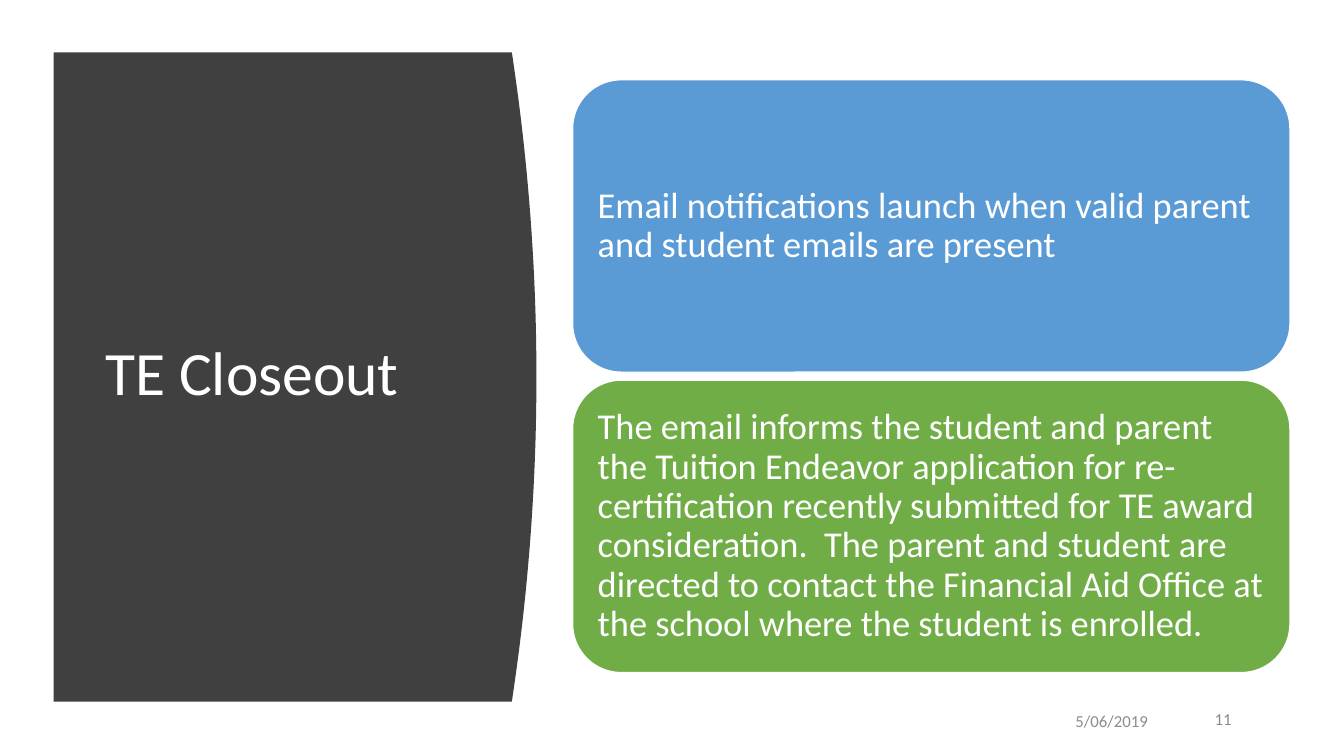
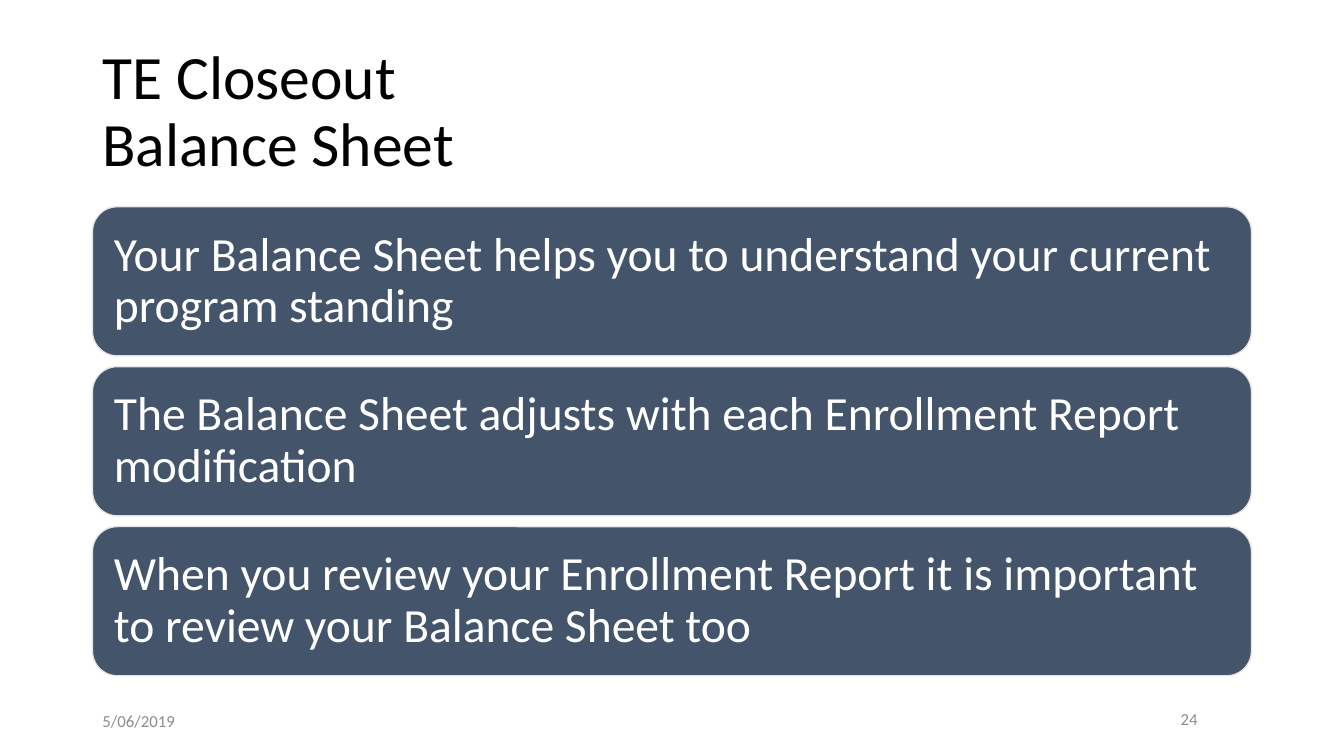
"""Builds two closeout slides with a shared title, card and footer style."""
from pptx import Presentation
from pptx import util as u
from pptx.dml.color import RGBColor
from pptx.enum import shapes, text

WHITE = RGBColor(0xFF, 0xFF, 0xFF)
BLACK = RGBColor(0x00, 0x00, 0x00)
CHARCOAL = RGBColor(0x40, 0x40, 0x40)
GREY = RGBColor(0x8C, 0x8C, 0x8C)
PALE = RGBColor(0xE7, 0xE6, 0xE6)
BLUE = RGBColor(0x5B, 0x9B, 0xD5)
GREEN = RGBColor(0x70, 0xAD, 0x47)
SLATE = RGBColor(0x44, 0x54, 0x6A)
FONT = "Calibri"
DATE = "5/06/2019"
LEFT, RIGHT = text.PP_ALIGN.LEFT, text.PP_ALIGN.RIGHT


def write(shape, words, size=12, color=GREY, align=LEFT, spacing=0.9, inset=None):
    """Put formatted, vertically centred text into a shape."""
    frame = shape.text_frame
    frame.word_wrap = True
    frame.vertical_anchor = text.MSO_ANCHOR.MIDDLE
    if inset is not None:
        frame.margin_left = frame.margin_right = inset
        frame.margin_top = frame.margin_bottom = inset
    paragraph = frame.paragraphs[0]
    paragraph.text = words
    paragraph.alignment = align
    paragraph.line_spacing = spacing
    for run in paragraph.runs:
        run.font.name = FONT
        run.font.size = u.Pt(size)
        run.font.color.rgb = color


class Deck:
    """Holds the presentation, its style and the current slide."""

    def __init__(self):
        """Start an empty widescreen presentation."""
        self.presentation = Presentation()
        self.presentation.slide_width = u.Cm(33.87)
        self.presentation.slide_height = u.Cm(19.05)
        self.slide = None

    def add_slide(self):
        """Add a blank slide and make it current."""
        self.slide = self.presentation.slides.add_slide(self.presentation.slide_layouts[6])

    def label(self, words, left, top, width, height, **style):
        """Add a text box."""
        box = self.slide.shapes.add_textbox(u.Cm(left), u.Cm(top), u.Cm(width), u.Cm(height))
        write(box, words, **style)

    def title(self, words, top, width, height, color=BLACK):
        """Add the slide title."""
        self.label(words, 2.4 if color == WHITE else 2.33, top, width, height, size=44, color=color)

    def footer(self, number, date_left, date_align, number_right):
        """Add the date and the slide number."""
        self.label(DATE, date_left, 17.65, 7.62, 1.01, align=date_align, spacing=1.0)
        self.label(number, number_right - 2, 17.65, 2, 1.01, align=RIGHT)

    def panel(self, left, top, width, height, bulge, steps=40):
        """Add a dark panel whose right side bows outward."""
        edge = []
        for step in range(steps + 1):
            offset = 2 * step / steps - 1
            x = left + width - bulge * offset ** 2
            edge.append((u.Cm(x), u.Cm(top + height * step / steps)))
        builder = self.slide.shapes.build_freeform(u.Cm(left), u.Cm(top))
        builder.add_line_segments(edge + [(u.Cm(left), u.Cm(top + height))], close=True)
        shape = builder.convert_to_shape()
        shape.shadow.inherit = False
        shape.fill.solid()
        shape.fill.fore_color.rgb = CHARCOAL
        shape.line.fill.background()

    def cards(self, items, left, top, width, height, gap, size, outline):
        """Stack rounded cards from (text, fill) pairs."""
        for index, (words, fill) in enumerate(items):
            card = self.slide.shapes.add_shape(
                shapes.MSO_SHAPE.ROUNDED_RECTANGLE, u.Cm(left),
                u.Cm(top + index * (height + gap)), u.Cm(width), u.Cm(height))
            card.shadow.inherit = False
            card.fill.solid()
            card.fill.fore_color.rgb = fill
            card.line.color.rgb = outline
            card.line.width = u.Pt(1)
            write(card, words, size=size, color=WHITE, inset=u.Pt(size * 0.3))


def main():
    """Build and save the slides."""
    deck = Deck()

    deck.add_slide()
    deck.panel(1.35, 1.32, 12.17, 16.36, bulge=0.62)
    deck.title("TE Closeout", 2.82, 9.5, 13.31, color=WHITE)
    deck.footer("11", 21.56, RIGHT, 31.29)
    deck.cards([
        ("Email notifications launch when valid parent and student emails are present", BLUE),
        ("The email informs the student and parent the Tuition Endeavor application for "
         "re-certification recently submitted for TE award consideration.  The parent and "
         "student are directed to contact the Financial Aid Office at the school where the "
         "student is enrolled.", GREEN),
    ], 14.43, 2.01, 18.08, 7.37, gap=0.2, size=26, outline=WHITE)

    deck.add_slide()
    deck.title("TE Closeout\nBalance Sheet", 1.01, 29.21, 3.68)
    deck.footer("24", 2.33, LEFT, 30.43)
    messages = [
        "Your Balance Sheet helps you to understand your current program standing",
        "The Balance Sheet adjusts with each Enrollment Report modification",
        "When you review your Enrollment Report it is important to review your Balance Sheet too",
    ]
    deck.cards([(message, SLATE) for message in messages],
               2.33, 5.21, 29.21, 3.76, gap=0.27, size=34, outline=PALE)

    deck.presentation.save("out.pptx")


if __name__ == "__main__":
    main()
